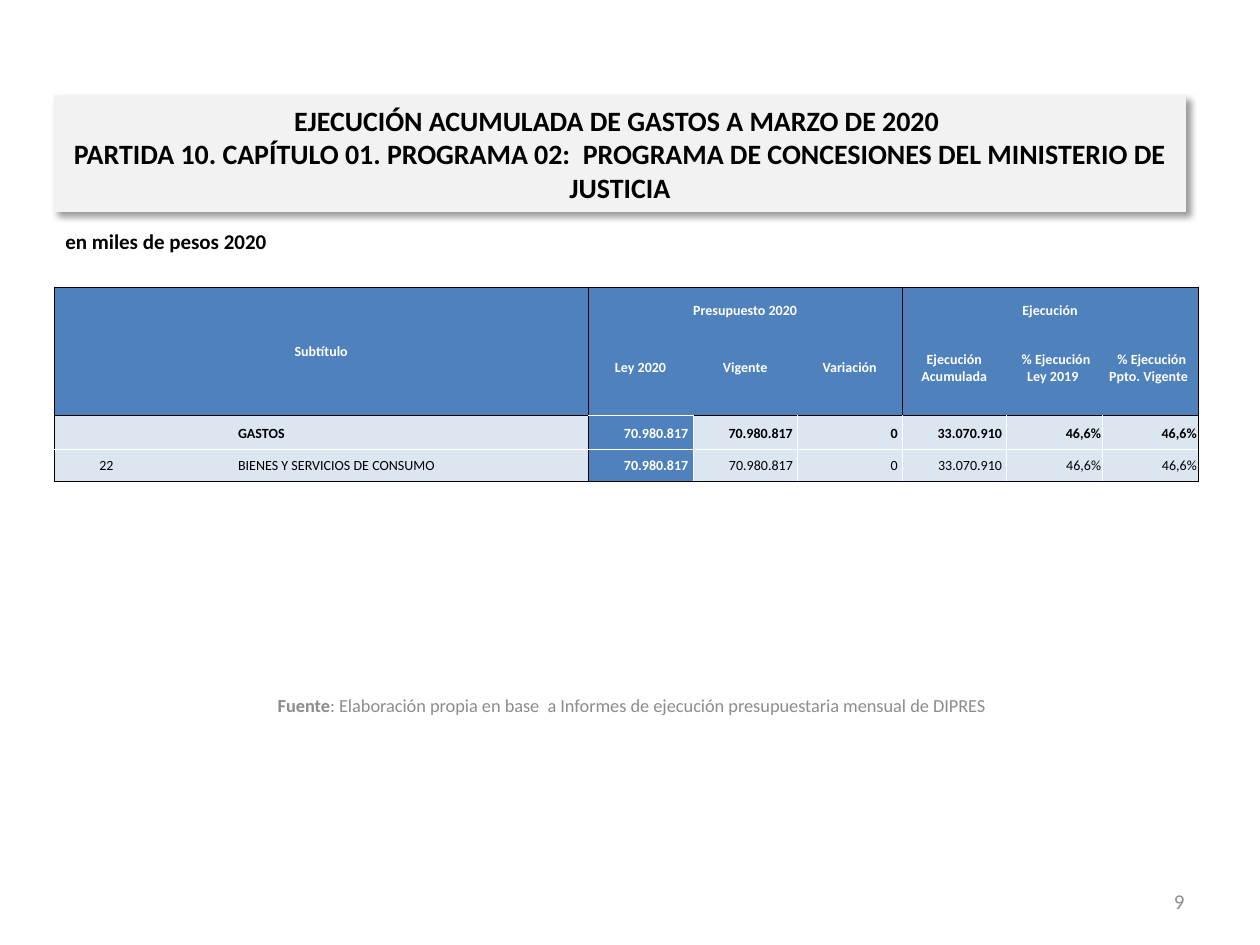
from dataclasses import dataclass
from typing import Any

from lxml import etree
from pptx import Presentation, util as u
from pptx.dml import color
from pptx.enum import shapes, text
from pptx.oxml import ns

WIDTH, HEIGHT = 10, 7.5
BLACK, WHITE, GREY, PALE = "000000", "FFFFFF", "8C8C8C", "F2F2F2"
HEADER_FILL, BODY_FILL = "4F81BD", "DCE6F1"
LEFT, CENTER, RIGHT, JUSTIFY = (
    text.PP_ALIGN.LEFT, text.PP_ALIGN.CENTER, text.PP_ALIGN.RIGHT, text.PP_ALIGN.JUSTIFY)
TOP, MIDDLE, BOTTOM = (
    text.MSO_ANCHOR.TOP, text.MSO_ANCHOR.MIDDLE, text.MSO_ANCHOR.BOTTOM)

COLUMNS = [0.83, 0.31, 0.31, 2.79, 0.83, 0.83, 0.83, 0.83, 0.76, 0.76]
ROWS = [0.25, 0.77, 0.27, 0.25]
MERGES = [(0, 0, 1, 3), (0, 4, 0, 6), (0, 7, 0, 9)]
FIGURES = ["70.980.817 ", "70.980.817 ", "0 ", "33.070.910 ", "46,6%", "46,6%"]
CELLS = [
    ["Subtítulo", "", "", "", "Presupuesto 2020", "", "", "Ejecución", "", ""],
    ["", "", "", "", "Ley 2020", "Vigente", "Variación", "Ejecución Acumulada",
     " % Ejecución Ley 2019 ", " % Ejecución Ppto. Vigente "],
    ["", "", "", "GASTOS", *FIGURES],
    ["22", "", "", "BIENES Y SERVICIOS DE CONSUMO", *FIGURES],
]


def rgb(value):
    """Return a colour from its hex string."""
    return color.RGBColor.from_string(value)


def add_xml(parent, tag, **attributes):
    """Append a drawing element to a parent and return it."""
    return etree.SubElement(parent, ns.qn(f"a:{tag}"), attributes)


def cell_edges(row, column, last_row, last_column):
    """Return the border colours of a cell by side, None where it has no line."""
    if row < 2:
        return {
            "L": BLACK if column in (0, 4, 7) else None,
            "R": BLACK if last_column in (3, 6, 9) else None,
            "T": BLACK if row == 0 else None,
            "B": (WHITE if column == 4 else BLACK) if last_row == 1 else None,
        }
    inner = WHITE if column > 3 else None
    return {
        "L": BLACK if column in (0, 4) else inner,
        "R": BLACK if column in (3, 9) else inner,
        "T": BLACK if row == 2 and column != 4 else WHITE,
        "B": BLACK if row == 3 else WHITE,
    }


def cell_alignment(row, column):
    """Return the alignment for a place in the table."""
    if row < 2 or column < 3:
        return CENTER
    return JUSTIFY if column == 3 else RIGHT


@dataclass
class SlideBuilder:
    """Holds the style and the current slide."""

    slide: Any
    font: str = "Calibri"

    def place(self, left, top, width, height):
        """Turn shares of the slide's size into lengths."""
        return [u.Inches(share * size) for share, size in
                zip((left, top, width, height), (WIDTH, HEIGHT) * 2)]

    def style(self, paragraph, size, hue, bold, alignment):
        """Set the font and alignment of a paragraph."""
        paragraph.alignment = alignment
        font = paragraph.font
        font.name, font.size, font.bold = self.font, u.Pt(size), bold
        font.color.rgb = rgb(hue)

    def label(self, box, runs, size, hue, bold=False, alignment=LEFT, anchor=MIDDLE):
        """Add a text box whose runs are pairs of wording and weight."""
        frame = self.slide.shapes.add_textbox(*self.place(*box)).text_frame
        frame.word_wrap, frame.vertical_anchor = True, anchor
        paragraph = frame.paragraphs[0]
        for wording, weight in runs:
            run = paragraph.add_run()
            run.text, run.font.bold = wording, weight
        self.style(paragraph, size, hue, bold, alignment)

    def banner(self, box, wording):
        """Add the shaded title panel with its drop shadow."""
        shape = self.slide.shapes.add_shape(
            shapes.MSO_SHAPE.RECTANGLE, *self.place(*box))
        shape.fill.solid()
        shape.fill.fore_color.rgb = shape.line.color.rgb = rgb(PALE)
        shape.line.width = u.Pt(0.75)
        shape.shadow.inherit = False
        effects = shape.element.spPr.find(ns.qn("a:effectLst"))
        shadow = add_xml(effects, "outerShdw", blurRad=str(u.Pt(4)), dist=str(u.Pt(3)),
                         dir="2700000", algn="tl", rotWithShape="0")
        add_xml(add_xml(shadow, "srgbClr", val=BLACK), "alpha", val="40000")
        frame = shape.text_frame
        frame.word_wrap, frame.vertical_anchor = True, MIDDLE
        paragraph = frame.paragraphs[0]
        paragraph.text = wording
        self.style(paragraph, 16, BLACK, True, CENTER)

    def borders(self, cell, edges):
        """Draw the four borders of a cell."""
        properties = cell._tc.get_or_add_tcPr()
        for side, hue in edges.items():
            line = add_xml(properties, f"ln{side}", w=str(u.Pt(0.5)))
            if hue:
                add_xml(add_xml(line, "solidFill"), "srgbClr", val=hue)
            else:
                add_xml(line, "noFill")

    def cell(self, cell, row, column, wording):
        """Fill, border and write one cell."""
        self.borders(cell, cell_edges(
            row, column, row + cell.span_height - 1, column + cell.span_width - 1))
        strong = row < 2 or column == 4
        cell.fill.solid()
        cell.fill.fore_color.rgb = rgb(HEADER_FILL if strong else BODY_FILL)
        cell.margin_left = cell.margin_right = cell.margin_top = u.Inches(0.01)
        cell.margin_bottom = 0
        cell.vertical_anchor = BOTTOM if row == 0 and column else MIDDLE
        paragraph = cell.text_frame.paragraphs[0]
        paragraph.text = wording
        self.style(paragraph, 8, WHITE if strong else BLACK, strong or row == 2,
                   cell_alignment(row, column))

    def table(self, box):
        """Add the budget table."""
        table = self.slide.shapes.add_table(
            len(ROWS), len(COLUMNS), *self.place(*box)).table
        table.first_row = table.horz_banding = False
        for column, width in zip(table.columns, COLUMNS):
            column.width = u.Inches(width)
        for row, height in zip(table.rows, ROWS):
            row.height = u.Inches(height)
        for top, left, bottom, right in MERGES:
            table.cell(top, left).merge(table.cell(bottom, right))
        for row, wordings in enumerate(CELLS):
            for column, wording in enumerate(wordings):
                self.cell(table.cell(row, column), row, column, wording)


def main():
    """Build the slide and save it."""
    presentation = Presentation()
    presentation.slide_width, presentation.slide_height = u.Inches(WIDTH), u.Inches(HEIGHT)
    builder = SlideBuilder(presentation.slides.add_slide(presentation.slide_layouts[6]))
    builder.label((0.042, 0.72, 0.919, 0.053), [
        ("Fuente", True),
        (": Elaboración propia en base  a Informes de ejecución presupuestaria "
         "mensual de DIPRES", False),
    ], 10.5, GREY, alignment=CENTER)
    builder.label((0.717, 0.927, 0.233, 0.053), [("9", None)], 12, GREY, alignment=RIGHT)
    builder.label((0.042, 0.235, 0.9, 0.045), [("en miles de pesos 2020", None)],
                  12, BLACK, bold=True, anchor=TOP)
    builder.banner((0.043, 0.101, 0.898, 0.123),
                   "EJECUCIÓN ACUMULADA DE GASTOS A MARZO DE 2020 \v"
                   "PARTIDA 10. CAPÍTULO 01. PROGRAMA 02:  "
                   "PROGRAMA DE CONCESIONES DEL MINISTERIO DE JUSTICIA")
    builder.table((0.043, 0.304, 0.908, 0.205))
    presentation.save("out.pptx")


if __name__ == "__main__":
    main()
